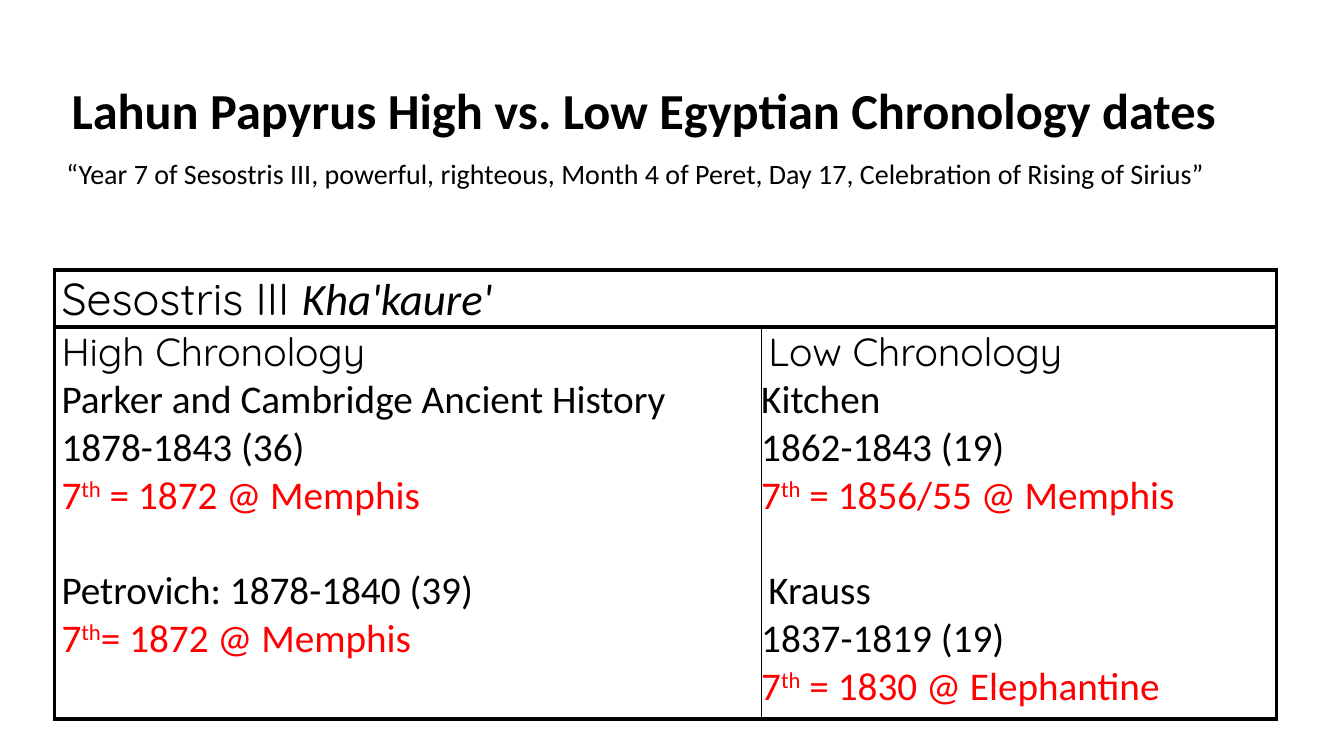
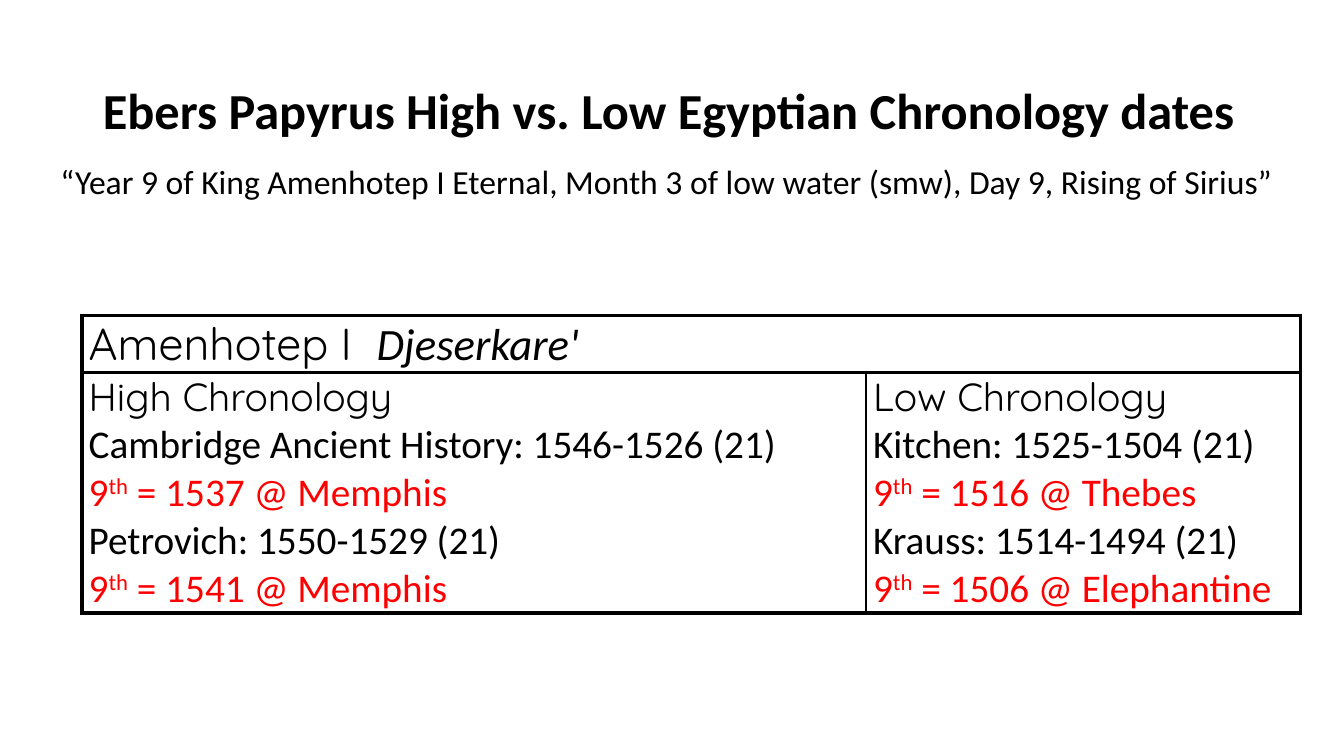
import dataclasses

import lxml.etree
import pptx
import pptx.dml.color
import pptx.enum.text
import pptx.oxml.ns
import pptx.util

Inches = pptx.util.Inches
Pt = pptx.util.Pt
ANCHOR = pptx.enum.text.MSO_ANCHOR

BLACK = pptx.dml.color.RGBColor(0x00, 0x00, 0x00)
RED = pptx.dml.color.RGBColor(0xFF, 0x00, 0x00)

BODY = {"name": "Calibri", "size": Pt(28), "bold": False, "italic": False}
HEADING = {**BODY, "name": "Quicksand"}
KING = {**HEADING, "size": Pt(32)}
THRONE_NAME = {**BODY, "size": Pt(32), "italic": True}
TITLE = {**BODY, "size": Pt(36), "bold": True}

THICK, THIN = 3, 1
CELL_PAD = 0.07


@dataclasses.dataclass
class Line:
    text: str
    style: dict = dataclasses.field(default_factory=lambda: BODY)
    indent: float = CELL_PAD
    gap: int = 0
    dated: bool = False


def heading(text):
    return Line(text, HEADING)


def dated(text, **options):
    """A red line whose ordinal "th" is raised."""
    return Line(text, dated=True, **options)


class Deck:
    def __init__(self):
        self.prs = pptx.Presentation()
        self.prs.slide_width = Inches(13.33)
        self.prs.slide_height = Inches(7.5)
        self.slide = None

    def add_run(self, p, text, style, color=BLACK, raised=False):
        r = p.add_run()
        r.text = text
        for name, value in style.items():
            setattr(r.font, name, value)
        r.font.color.rgb = color
        if raised:
            r.font._element.set("baseline", "30000")

    def fill_frame(self, sp, text, style, anchor):
        tf = sp.text_frame
        settings = {"word_wrap": True, "vertical_anchor": anchor,
                    "auto_size": pptx.enum.text.MSO_AUTO_SIZE.NONE}
        for name, value in settings.items():
            setattr(tf, name, value)
        p = tf.paragraphs[0]
        p.alignment = pptx.enum.text.PP_ALIGN.LEFT
        p.line_spacing = 0.9
        self.add_run(p, text, style)

    def add_slide(self, title, left, width):
        self.slide = self.prs.slides.add_slide(self.prs.slide_layouts[5])
        sp = self.slide.shapes.title
        box = {"left": left, "top": 0.4, "width": width, "height": 1.45}
        for name, value in box.items():
            setattr(sp, name, Inches(value))
        self.fill_frame(sp, title, TITLE, ANCHOR.MIDDLE)

    def add_quote(self, text, size, left, top, width, height):
        sp = self.slide.shapes.add_textbox(
            Inches(left), Inches(top), Inches(width), Inches(height))
        self.fill_frame(sp, text, {**BODY, "size": Pt(size)}, ANCHOR.TOP)

    def format_cell(self, cell, anchor, left=THICK, right=THICK):
        """Clear the fill and insets and draw the borders, widths in points."""
        cell.vertical_anchor = anchor
        for side in ("left", "right", "top", "bottom"):
            setattr(cell, "margin_" + side, 0)
        tcPr = cell._tc.get_or_add_tcPr()
        qn = pptx.oxml.ns.qn
        widths = {"lnL": left, "lnR": right, "lnT": THICK, "lnB": THICK}
        for tag, width in widths.items():
            ln = lxml.etree.SubElement(tcPr, qn("a:" + tag), w=str(Pt(width)))
            fill = lxml.etree.SubElement(ln, qn("a:solidFill"))
            lxml.etree.SubElement(fill, qn("a:srgbClr"), val=str(BLACK))
        cell.fill.background()

    def indent(self, p, inches):
        p._p.get_or_add_pPr().set("marL", str(Inches(inches)))

    def write_lines(self, cell, lines):
        tf = cell.text_frame
        for i, line in enumerate(lines):
            p = tf.add_paragraph() if i else tf.paragraphs[0]
            self.indent(p, line.indent)
            if line.gap:
                p.space_before = Pt(line.gap)
            if line.dated:
                number, ordinal, rest = line.text.partition("th")
                self.add_run(p, number, line.style, RED)
                self.add_run(p, ordinal, line.style, RED, raised=True)
                self.add_run(p, rest, line.style, RED)
            else:
                self.add_run(p, line.text, line.style)

    def add_chronology(self, left, top, cols, body_height, king, throne_name,
                       high, low):
        rows = (0.55, body_height)
        frame = self.slide.shapes.add_table(
            2, 2, Inches(left), Inches(top), Inches(sum(cols)), Inches(sum(rows)))
        table = frame.table
        table.first_row = table.horz_banding = False
        for col, width in zip(table.columns, cols):
            col.width = Inches(width)
        for row, height in zip(table.rows, rows):
            row.height = Inches(height)

        header = table.cell(0, 0)
        header.merge(table.cell(0, 1))
        for cell in table.rows[0].cells:
            self.format_cell(cell, ANCHOR.MIDDLE)
        p = header.text_frame.paragraphs[0]
        self.indent(p, CELL_PAD)
        self.add_run(p, king, KING)
        self.add_run(p, throne_name, THRONE_NAME)

        high_cell, low_cell = table.rows[1].cells
        self.format_cell(high_cell, ANCHOR.TOP, right=THIN)
        self.format_cell(low_cell, ANCHOR.TOP, left=THIN)
        self.write_lines(high_cell, [heading("High Chronology"), *high])
        self.write_lines(low_cell, [heading("Low Chronology"), *low])


def main():
    deck = Deck()

    deck.add_slide("Lahun Papyrus High vs. Low Egyptian Chronology dates", 0.61, 12.17)
    deck.add_chronology(
        0.54, 2.68, (7.01, 5.11), 3.89, "Sesostris III ", "Kha'kaure'",
        high=[
            Line("Parker and Cambridge Ancient History"),
            Line("1878-1843 (36)"),
            dated("7th = 1872 @ Memphis"),
            Line("Petrovich: 1878-1840 (39)", gap=34),
            dated("7th= 1872 @ Memphis"),
        ],
        low=[
            Line("Kitchen", indent=0),
            Line("1862-1843 (19)", indent=0),
            dated("7th = 1856/55 @ Memphis", indent=0),
            Line("Krauss", gap=34),
            Line("1837-1819 (19)", indent=0),
            dated("7th = 1830 @ Elephantine", indent=0),
        ])
    deck.add_quote(
        "“Year 7 of Sesostris III, powerful, righteous, Month 4 of Peret, "
        "Day 17, Celebration of Rising of Sirius”", 20, 0.56, 1.54, 11.9, 0.59)

    deck.add_slide("Ebers Papyrus High vs. Low Egyptian Chronology dates", 0.92, 11.5)
    deck.add_chronology(
        0.81, 3.13, (7.78, 4.31), 2.37, "Amenhotep I  ", "Djeserkare'",
        high=[
            Line("Cambridge Ancient History: 1546-1526 (21)"),
            dated("9th = 1537 @ Memphis"),
            Line("Petrovich: 1550-1529 (21)"),
            dated("9th = 1541 @ Memphis"),
        ],
        low=[
            Line("Kitchen: 1525-1504 (21)"),
            dated("9th = 1516 @ Thebes"),
            Line("Krauss: 1514-1494 (21)"),
            dated("9th = 1506 @ Elephantine"),
        ])
    deck.add_quote(
        "“Year 9 of King Amenhotep I Eternal, Month 3 of low water (smw), "
        "Day 9, Rising of Sirius”", 24, 0.5, 1.59, 12.28, 0.91)

    deck.prs.save("out.pptx")


if __name__ == "__main__":
    main()
